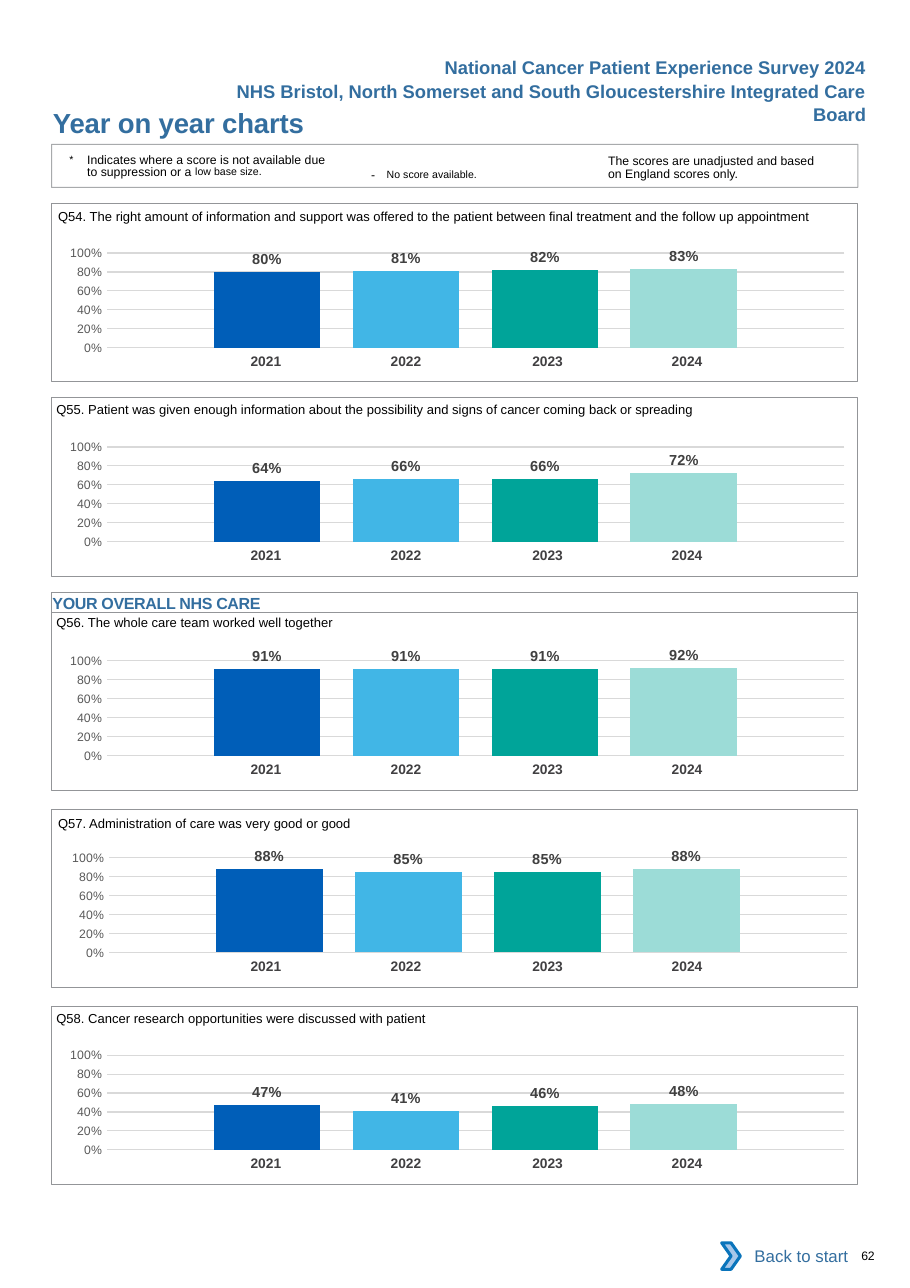
from dataclasses import dataclass
from typing import NamedTuple

from pptx import Presentation
from pptx import util as u
from pptx.chart import data
from pptx.dml import color
from pptx.enum import chart as ch, shapes, text
from pptx.oxml import ns, parse_xml

HEADING, GREY, BLACK = "336E9F", "939598", "000000"
NO_TABLE_STYLE = "{2D5ABB26-0587-4C30-8999-92F81FD0307C}"
LEFT, WIDTH, PANEL_HEIGHT = 1.19, 18.59, 4.11
DEFAULT_INSETS = (0.25, 0.13, 0.25, 0.13)
YEAR_COLUMNS = {"2021": (3.23, 0), "2022": (3.23, 0), "2023": (3.4, 0.1), "2024": (3.23, 0.3)}
YEAR_COLOURS = ["005EB8", "41B6E6", "00A499", "9CDCD7"]


class Part(NamedTuple):
    words: str
    size: float = 8
    bold: bool = False
    colour: str = BLACK
    spacing: float = 0
    raised: int = 0


class Box(NamedTuple):
    left: float
    top: float
    width: float
    height: float


@dataclass
class Question:
    title: str
    scores: list[float]
    panel_top: float
    title_top: float
    chart_top: float
    title_left: float = 1.3
    chart_left: float = 0.99


QUESTIONS = [
    Question("Q54. The right amount of information and support was offered to the patient "
             "between final treatment and the follow up appointment",
             [0.80, 0.81, 0.82, 0.83], 4.69, 4.57, 5.36, title_left=1.34),
    Question("Q55. Patient was given enough information about the possibility and signs of "
             "cancer coming back or spreading",
             [0.64, 0.66, 0.66, 0.72], 9.17, 9.02, 9.83),
    Question("Q56. The whole care team worked well together",
             [0.91, 0.91, 0.91, 0.92], 14.12, 13.94, 14.76),
    Question("Q57. Administration of care was very good or good",
             [0.88, 0.85, 0.85, 0.88], 18.66, 18.57, 19.3, title_left=1.34, chart_left=1.04),
    Question("Q58. Cancer research opportunities were discussed with patient",
             [0.47, 0.41, 0.46, 0.48], 23.2, 23.06, 23.85),
]

presentation = Presentation()
presentation.slide_width, presentation.slide_height = u.Cm(20.98), u.Cm(29.69)
page = presentation.slides.add_slide(presentation.slide_layouts[6]).shapes


def rgb(code: str) -> color.RGBColor:
    return color.RGBColor.from_string(code)


def cm(*lengths: float) -> list[u.Cm]:
    return [u.Cm(length) for length in lengths]


def style_font(font, size: float, colour: str, bold: bool = False) -> None:
    font.name, font.size, font.bold = "Arial", u.Pt(size), bold
    font.color.rgb = rgb(colour)


def write(shape, parts: list[Part], insets=(0, 0, 0, 0), align=text.PP_ALIGN.LEFT,
          anchor=text.MSO_ANCHOR.TOP, wrap: bool = True):
    """Fill a shape with one paragraph and return that paragraph."""
    frame = shape.text_frame
    frame.margin_left, frame.margin_top, frame.margin_right, frame.margin_bottom = cm(*insets)
    frame.word_wrap, frame.vertical_anchor = wrap, anchor
    paragraph = frame.paragraphs[0]
    paragraph.alignment = align
    for part in parts:
        run = paragraph.add_run()
        run.text = part.words
        style_font(run.font, part.size, part.colour, part.bold)
        properties = run._r.get_or_add_rPr()
        if part.spacing:
            properties.set("spc", str(round(part.spacing * 100)))
        if part.raised:
            properties.set("baseline", str(part.raised * 1000))
    return paragraph


def add_text(box: Box, *parts: Part, **layout):
    return write(page.add_textbox(*cm(*box)), list(parts), **layout)


def add_outline(box: Box, preset=shapes.MSO_SHAPE.RECTANGLE, fill: str = "",
                line: str = "", weight: float = 0.5):
    shape = page.add_shape(preset, *cm(*box))
    shape.shadow.inherit = False
    if fill:
        shape.fill.solid()
        shape.fill.fore_color.rgb = rgb(fill)
    else:
        shape.fill.background()
    if line:
        shape.line.color.rgb = rgb(line)
        shape.line.width = u.Pt(weight)
    else:
        shape.line.fill.background()
    return shape


def add_years(top: float) -> None:
    total = sum(width for width, _ in YEAR_COLUMNS.values())
    frame = page.add_table(1, len(YEAR_COLUMNS), *cm(4.39, top, total, 0.69))
    frame._element.xpath(".//a:tableStyleId")[0].text = NO_TABLE_STYLE
    table = frame.table
    table.first_row = table.horz_banding = False
    for index, (year, (width, right)) in enumerate(YEAR_COLUMNS.items()):
        table.columns[index].width = u.Cm(width)
        cell = table.cell(0, index)
        cell.fill.background()
        cell.margin_left, cell.margin_right, cell.margin_top, cell.margin_bottom = cm(
            0.25, right, 0.13, 0.13)
        cell.text_frame.text = year
        paragraph = cell.text_frame.paragraphs[0]
        paragraph.alignment = text.PP_ALIGN.CENTER
        style_font(paragraph.runs[0].font, 9, "414042", True)


def add_scores(question: Question) -> None:
    scores = data.CategoryChartData(number_format="0%")
    scores.categories = ["1"]
    for number, score in enumerate(question.scores, 1):
        scores.add_series(f"Series {number}", [score])
    chart = page.add_chart(ch.XL_CHART_TYPE.COLUMN_CLUSTERED,
                           *cm(question.chart_left, question.chart_top, WIDTH, 3.28),
                           scores).chart
    chart.has_title = chart.has_legend = False
    chart.font.name, chart.font.size = "Calibri", u.Pt(10)
    chart.font.color.rgb = rgb(BLACK)

    # Axes
    chart.category_axis.visible = False
    axis = chart.value_axis
    axis.minimum_scale, axis.maximum_scale, axis.major_unit = 0, 1, 0.2
    axis.major_tick_mark = axis.minor_tick_mark = ch.XL_TICK_MARK.NONE
    axis.format.line.fill.background()
    axis.major_gridlines.format.line.color.rgb = rgb("D9D9D9")
    axis.major_gridlines.format.line.width = u.Pt(0.75)
    axis.tick_labels.number_format = "0%"
    axis.tick_labels.number_format_is_linked = False
    style_font(axis.tick_labels.font, 8, "595959")

    # Bars and their labels
    plot = chart.plots[0]
    plot.gap_width, plot.overlap, plot.vary_by_categories = 200, -30, False
    for series, colour in zip(plot.series, YEAR_COLOURS):
        series.format.fill.solid()
        series.format.fill.fore_color.rgb = rgb(colour)
        labels = series.data_labels
        labels.show_value, labels.position = True, ch.XL_LABEL_POSITION.OUTSIDE_END
        labels.number_format, labels.number_format_is_linked = "0%", False
        style_font(labels.font, 9.5, "404040", True)

    # Fixed plot area
    area = chart._chartSpace.xpath(".//c:plotArea")[0]
    for layout in area.xpath("./c:layout"):
        area.remove(layout)
    places = "".join(f'<c:{tag} val="{value}"/>' for tag, value in (
        ("layoutTarget", "inner"), ("xMode", "edge"), ("yMode", "edge"),
        ("x", 0.079), ("y", 0.145), ("w", 0.915), ("h", 0.666)))
    area.insert(0, parse_xml(f'<c:layout {ns.nsdecls("c")}><c:manualLayout>{places}'
                             "</c:manualLayout></c:layout>"))


def main() -> None:
    # Page headings
    add_text(Box(9.96, 1.17, 10.26, 0.76),
             Part("National Cancer Patient Experience Survey 2024", 12, True, HEADING),
             insets=DEFAULT_INSETS, align=text.PP_ALIGN.RIGHT, wrap=False)
    add_text(Box(4.14, 1.73, 16.08, 1.27),
             Part("NHS Bristol, North Somerset and South Gloucestershire Integrated Care Board",
                  12, True, HEADING),
             insets=DEFAULT_INSETS, align=text.PP_ALIGN.RIGHT)
    add_text(Box(1.22, 2.44, 11.43, 0.76), Part("Year on year charts", 18, True, HEADING, -0.1))

    # Key to the scores
    key = add_outline(Box(LEFT, 3.33, WIDTH, 0.99), line=GREY, weight=0.75)
    key.line._ln.xpath(".//a:srgbClr")[0].append(
        parse_xml(f'<a:alpha {ns.nsdecls("a")} val="80000"/>'))
    suppressed = add_text(Box(1.6, 3.51, 6.05, 0.7), Part("*\t", 12, raised=3),
                          Part("Indicates where a score is not available due to suppression or a "),
                          Part("low base size.", 12, raised=7), insets=(0, 0.08, 0, 0))
    suppressed._p.get_or_add_pPr().set("marL", str(u.Cm(0.41)))
    suppressed._p.get_or_add_pPr().set("indent", str(-u.Cm(0.41)))
    add_text(Box(8.31, 3.58, 4.65, 0.61), Part("- ", spacing=2.6),
             Part("No score available.", 12, raised=3), insets=DEFAULT_INSETS)
    unadjusted = add_text(Box(14.02, 3.51, 5, 0.69),
                          Part("The scores are unadjusted and based on England scores only."),
                          insets=(0, 0.08, 0, 0))
    suppressed.line_spacing = unadjusted.line_spacing = u.Pt(8.1)

    # Question panels
    for question in QUESTIONS:
        add_years(question.chart_top + 2.67)
        add_scores(question)
        add_outline(Box(LEFT, question.panel_top, WIDTH, PANEL_HEIGHT), line=GREY)
        add_text(Box(question.title_left, question.title_top, 19.3, 0.61),
                 Part(question.title, 8.5), insets=(0, 0.23, 0, 0))

    # Section heading
    write(add_outline(Box(LEFT, 13.66, WIDTH, 0.46), line=GREY),
          [Part("YOUR OVERALL NHS CARE", 10.5, True, HEADING, -0.2)], insets=(0.02, 0.03, 0, 0))

    # Footer
    write(add_outline(Box(16.81, 28.42, 3, 1.07), fill="FFFFFF"),
          [Part("Back to start", 11, colour=HEADING)], insets=DEFAULT_INSETS,
          align=text.PP_ALIGN.RIGHT, anchor=text.MSO_ANCHOR.MIDDLE)
    add_outline(Box(16.64, 28.65, 0.43, 0.61), shapes.MSO_SHAPE.CHEVRON, "A8C7E9", "0A74BB", 2)
    add_text(Box(19.86, 28.78, 1.05, 0.33), Part("62", spacing=-0.2))

    presentation.save("out.pptx")


if __name__ == "__main__":
    main()
